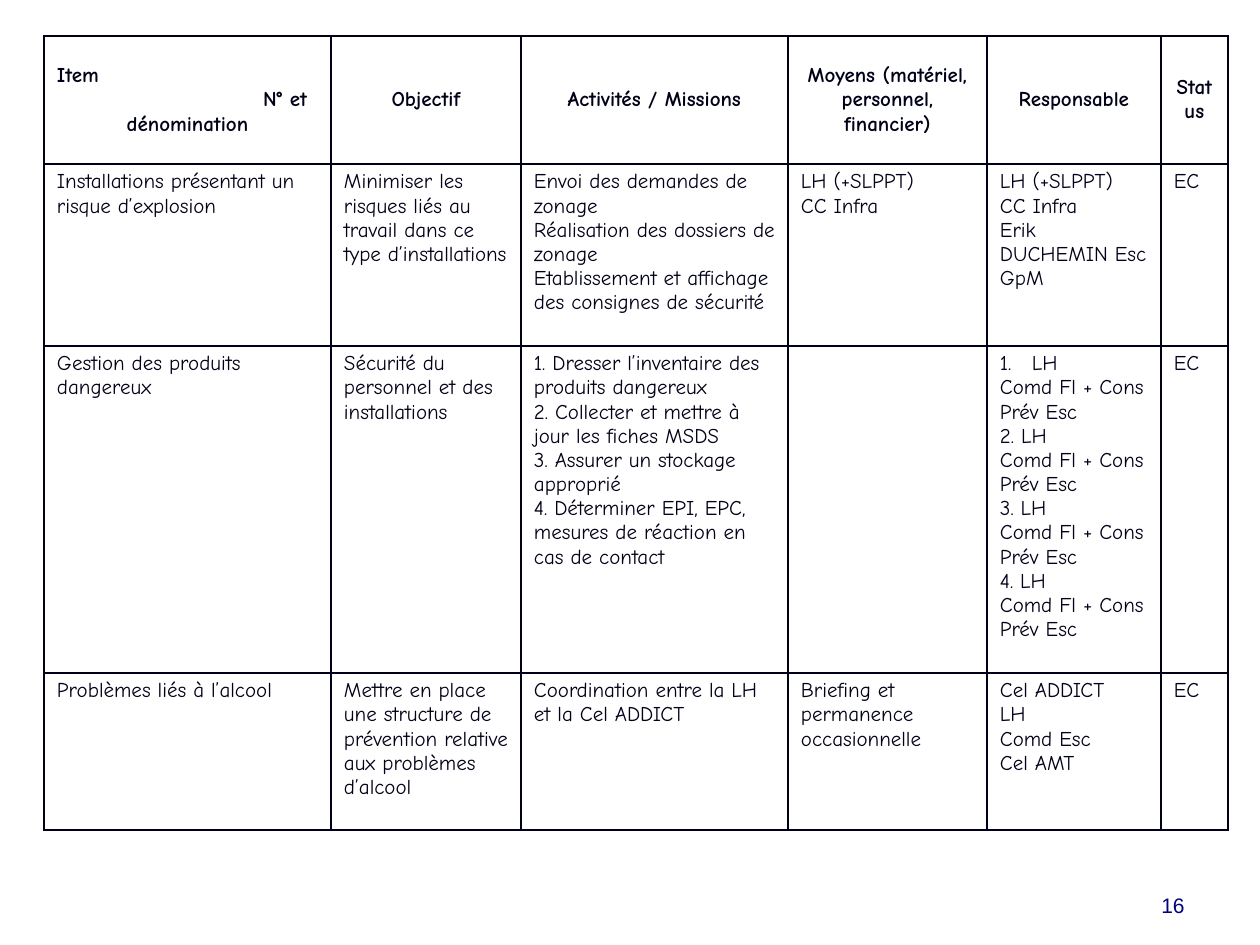
from lxml.etree import SubElement
from pptx import Presentation
from pptx.dml.color import RGBColor
from pptx.enum.text import MSO_ANCHOR as Anchor, PP_ALIGN as Align
from pptx.oxml.ns import qn
from pptx.util import Pt

SCALE = 914400 / 126
INK = "000018"
COLUMNS = [287, 190, 267, 199, 174, 67]
ROWS = [128, 182, 327, 157]
HEADER = [
    ["Item", "N° et", "dénomination"],
    ["Objectif"],
    ["Activités / Missions"],
    ["Moyens (matériel, personnel, financier)"],
    ["Responsable"],
    ["Status"],
]
TEAM = "Comd Fl + Cons Prév Esc"
BODY = [
    [
        ["Installations présentant un risque d’explosion"],
        ["Minimiser les risques liés au travail dans ce type d’installations"],
        ["Envoi des demandes de zonage", "Réalisation des dossiers de zonage",
         "Etablissement et affichage des consignes de sécurité"],
        ["LH (+SLPPT)", "CC Infra"],
        ["LH (+SLPPT)", "CC Infra", "Erik DUCHEMIN Esc GpM"],
        ["EC"],
    ],
    [
        ["Gestion des produits dangereux"],
        ["Sécurité du personnel et des installations"],
        ["1. Dresser l’inventaire des produits dangereux",
         "2. Collecter et mettre à jour les fiches MSDS",
         "3. Assurer un stockage approprié",
         "4. Déterminer EPI, EPC, mesures de réaction en cas de contact"],
        [],
        ["LH", TEAM, "2. LH", TEAM, "3. LH", TEAM, "4. LH", TEAM],
        ["EC"],
    ],
    [
        ["Problèmes liés à l’alcool"],
        ["Mettre en place une structure de prévention relative aux problèmes d’alcool"],
        ["Coordination entre la LH et la Cel ADDICT"],
        ["Briefing et permanence occasionnelle"],
        ["Cel ADDICT", "LH", "Comd Esc", "Cel AMT"],
        ["EC"],
    ],
]


def px(value):
    """Turn pixels into EMU."""
    return round(value * SCALE)


def color(value):
    """Turn a hex string into a colour."""
    return RGBColor.from_string(value)


def set_all(target, values):
    """Set each attribute named in a dict."""
    for name, value in values.items():
        setattr(target, name, value)


def write(frame, lines, align, font_color=INK, name="Comic Neue", bold=False):
    """Write lines as paragraphs of one format."""
    for index, line in enumerate(lines):
        paragraph = frame.add_paragraph() if index else frame.paragraphs[0]
        paragraph.alignment = align
        run = paragraph.add_run()
        run.text = line
        set_all(run.font, {"name": name, "size": Pt(12), "bold": bold})
        run.font.color.rgb = color(font_color)


def indent(paragraph, left, first=0):
    """Indent a paragraph and its first line."""
    properties = paragraph._p.get_or_add_pPr()
    properties.set("marL", str(px(left)))
    properties.set("indent", str(px(first)))
    return properties


def style_cell(cell, anchor):
    """Give a cell its borders, margins and fill."""
    properties = cell._tc.get_or_add_tcPr()
    for side in ("lnL", "lnR", "lnT", "lnB"):
        line = SubElement(properties, qn(f"a:{side}"), w=str(Pt(1)))
        fill = SubElement(line, qn("a:solidFill"))
        SubElement(fill, qn("a:srgbClr"), val=INK)
    cell.fill.solid()
    cell.fill.fore_color.rgb = color("FFFFFF")
    set_all(cell, {"vertical_anchor": anchor,
                   "margin_left": px(13), "margin_right": px(13),
                   "margin_top": px(6), "margin_bottom": px(6)})


def add_plan(slide, left, top):
    """Place the action plan table."""
    shape = slide.shapes.add_table(len(ROWS), len(COLUMNS), px(left), px(top),
                                   px(sum(COLUMNS)), px(sum(ROWS)))
    table = shape.table
    set_all(table, {"first_row": False, "horz_banding": False})
    for column, width in zip(table.columns, COLUMNS):
        column.width = px(width)
    for row, height in zip(table.rows, ROWS):
        row.height = px(height)
    for row_index, cells in enumerate([HEADER, *BODY]):
        is_header = row_index == 0
        for column_index, lines in enumerate(cells):
            cell = table.cell(row_index, column_index)
            style_cell(cell, Anchor.MIDDLE if is_header else Anchor.TOP)
            write(cell.text_frame, lines, Align.CENTER if is_header else Align.LEFT,
                  bold=is_header)
    item, number = table.cell(0, 0).text_frame.paragraphs[:2]
    item.alignment = number.alignment = Align.LEFT
    indent(number, 206)
    numbered = table.cell(2, 4).text_frame.paragraphs[0]
    SubElement(indent(numbered, 32, -32), qn("a:buAutoNum"), type="arabicPeriod")


def add_page_number(slide, left, top, width, height):
    """Place the page number at the lower right of its box."""
    box = slide.shapes.add_textbox(px(left), px(top), px(width), px(height))
    set_all(box.text_frame, {"word_wrap": True, "vertical_anchor": Anchor.BOTTOM})
    write(box.text_frame, ["16"], Align.RIGHT, "000080", "Arial")


def main():
    """Build and save the slide."""
    presentation = Presentation()
    set_all(presentation, {"slide_width": px(1260), "slide_height": px(945)})
    slide = presentation.slides.add_slide(presentation.slide_layouts[6])
    add_plan(slide, 44, 36)
    add_page_number(slide, 903, 861, 294, 63)
    presentation.save("out.pptx")


if __name__ == "__main__":
    main()
